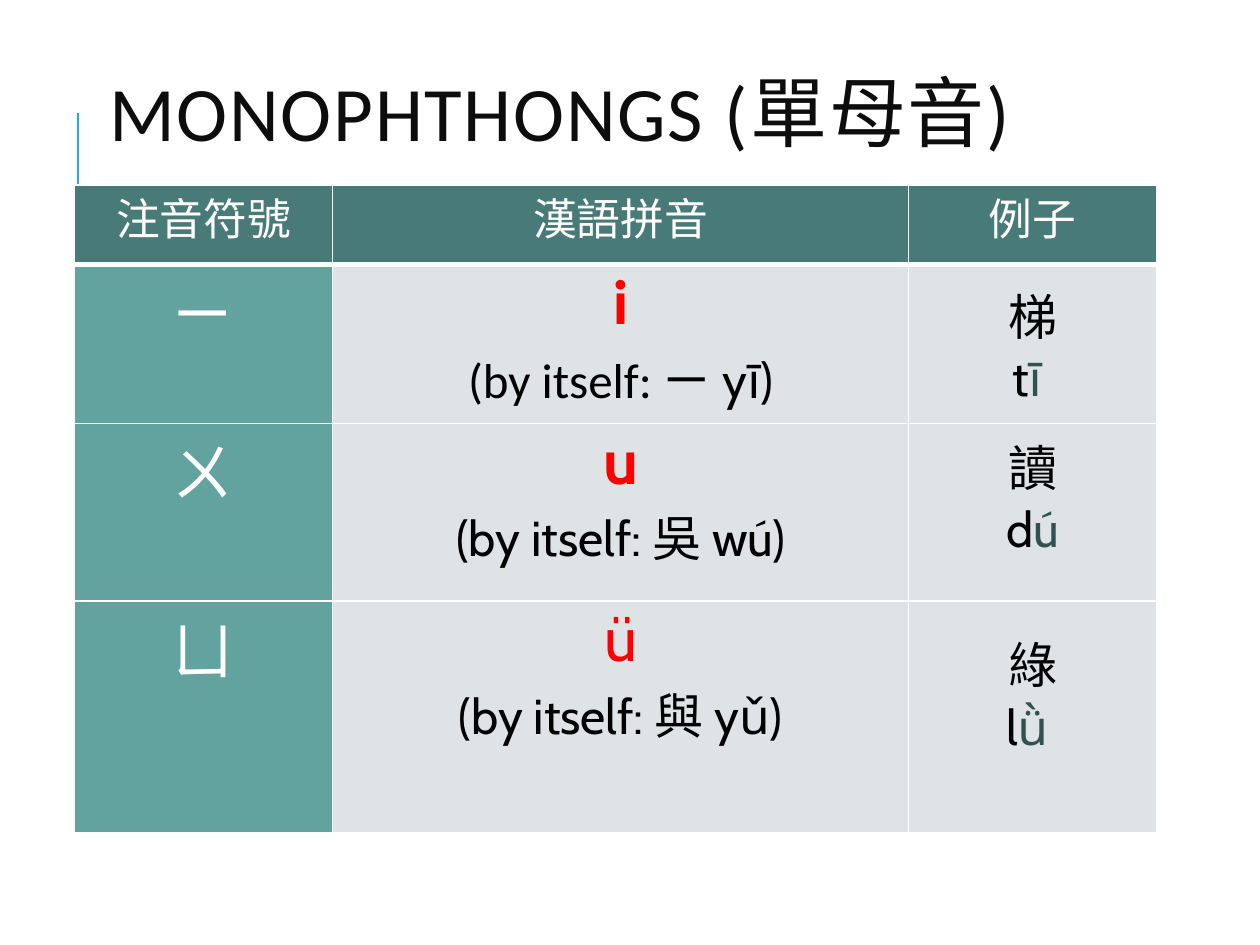
from lxml.etree import SubElement
from pptx import Presentation
from pptx.dml.color import RGBColor
from pptx.enum.shapes import MSO_CONNECTOR as Connector
from pptx.enum.text import MSO_ANCHOR as Anchor, PP_ALIGN as Align
from pptx.oxml.ns import qn
from pptx.util import Inches, Pt

WHITE = RGBColor(0xFF, 0xFF, 0xFF)
BLACK = RGBColor(0, 0, 0)
INK = RGBColor(0x0D, 0x0D, 0x0D)
RED = RGBColor(0xFF, 0, 0)
HEADER = RGBColor(0x48, 0x7B, 0x78)
TEAL = RGBColor(0x62, 0xA3, 0x9F)
PALE = RGBColor(0xDF, 0xE3, 0xE5)
DARK_TEAL = RGBColor(0x30, 0x52, 0x50)
BLUE = RGBColor(0x1C, 0xAD, 0xE4)

COLUMNS = (2.05, 4.57, 1.97)
LEFT, WIDTH = 0.59, sum(COLUMNS)


def add_text(paragraph, text, font="Cabin", size=28, color=BLACK, bold=False, spacing=0):
    """Append one formatted run to a paragraph."""
    run = paragraph.add_run()
    run.text = text
    run.font.name, run.font.size, run.font.bold = font, Pt(size), bold
    run.font.color.rgb = color
    if spacing:
        run.font._element.set("spc", str(spacing * 100))


def set_borders(cell, bottom):
    """Draw white borders around a cell, the bottom one in its own width."""
    properties = cell._tc.get_or_add_tcPr()
    for side, width in (("L", 1), ("R", 1), ("T", 1), ("B", bottom)):
        line = SubElement(properties, qn(f"a:ln{side}"), w=str(Pt(width)))
        SubElement(SubElement(line, qn("a:solidFill")), qn("a:srgbClr"), val=str(WHITE))


def fill_cell(cell, lines, fill, anchor=Anchor.TOP, bottom_border=1, margins=(0.07, 0, 0)):
    """Write centred lines, each a list of (text, format) pairs, into a styled cell."""
    side, top, bottom = margins
    set_borders(cell, bottom_border)
    cell.fill.solid()
    cell.fill.fore_color.rgb = fill
    cell.vertical_anchor = anchor
    cell.margin_left = cell.margin_right = Inches(side)
    cell.margin_top, cell.margin_bottom = Inches(top), Inches(bottom)
    frame = cell.text_frame
    for index, runs in enumerate(lines):
        paragraph = frame.add_paragraph() if index else frame.paragraphs[0]
        paragraph.alignment = Align.CENTER
        for text, style in runs:
            add_text(paragraph, text, **style)


def add_grid(slide, top, rows):
    """Add a table of the shared columns with the given row heights."""
    table = slide.shapes.add_table(
        len(rows), len(COLUMNS), Inches(LEFT), Inches(top), Inches(WIDTH), Inches(sum(rows))
    ).table
    for column, width in zip(table.columns, COLUMNS):
        column.width = Inches(width)
    for row, height in zip(table.rows, rows):
        row.height = Inches(height)
    return table


def fill_sound_row(row, symbol, vowel, usage, example, symbol_style=None, vowel_style=None,
                   example_style=None, bottom_border=1):
    """Fill a row with a symbol, its romanisation and an example word."""
    character, initial, final = example
    symbol_cell, vowel_cell, example_cell = row.cells
    symbol_format = {"size": 36, "color": WHITE, **(symbol_style or {})}
    vowel_format = {"size": 36, "color": RED, "bold": True, **(vowel_style or {})}
    fill_cell(symbol_cell, [[(symbol, symbol_format)]], TEAL, bottom_border=bottom_border)
    fill_cell(vowel_cell, [[(vowel, vowel_format)], usage], PALE, bottom_border=bottom_border)
    fill_cell(example_cell, [[(character, {})], [(initial, {}), (final, {"color": DARK_TEAL})]],
              PALE, bottom_border=bottom_border, **(example_style or {"anchor": Anchor.MIDDLE}))


def add_sound_tables(slide, top, rows, last_height):
    """Add the headed table and the one-row table that continues it."""
    table = add_grid(slide, top, rows)
    for cell, heading in zip(table.rows[0].cells, ("注音符號", "漢語拼音", "例子")):
        fill_cell(cell, [[(heading, {"size": 25, "color": WHITE})]], HEADER, bottom_border=3)
    calibri = {"font": "Calibri"}
    fill_sound_row(table.rows[1], "ㄧ", "i", [("(by itself: ㄧ ", calibri), ("yī)", {})],
                   ("梯", "t", "ī "), vowel_style=calibri)
    fill_sound_row(table.rows[2], "ㄨ", "u", [("(by itself: 吳 wú)", {})], ("讀", "d", "ú"),
                   example_style={"margins": (0.1, 0.05, 0.05)})
    last = add_grid(slide, top + sum(rows), (last_height,))
    fill_sound_row(last.rows[0], "ㄩ", "ü", [("(by itself: 與 yǔ)", {})], ("綠", "l", "ǜ "),
                   symbol_style={"font": "DejaVu Sans Mono"}, vowel_style={"bold": False},
                   example_style={"anchor": Anchor.MIDDLE, "margins": (0.07, 0, 0.4)},
                   bottom_border=3)


def add_accent(slide, left, top, height):
    """Draw the vertical accent line beside the title."""
    line = slide.shapes.add_connector(
        Connector.STRAIGHT, Inches(left), Inches(top + height), Inches(left), Inches(top))
    line.line.color.rgb = BLUE
    line.line.width = Pt(1.5)
    SubElement(line._element.spPr, qn("a:effectLst"))


def add_title(slide, left, top, width, height):
    """Add the slide title."""
    box = slide.shapes.add_textbox(Inches(left), Inches(top), Inches(width), Inches(height))
    frame = box.text_frame
    frame.word_wrap = True
    frame.vertical_anchor = Anchor.MIDDLE
    paragraph = frame.paragraphs[0]
    paragraph.line_spacing = 0.8
    add_text(paragraph, "MONOPHTHONGS (單母音)", font="Calibri", size=44, color=INK, spacing=1)


def main():
    """Build and save the presentation."""
    presentation = Presentation()
    presentation.slide_width, presentation.slide_height = Inches(10), Inches(7.5)
    slide = presentation.slides.add_slide(presentation.slide_layouts[6])
    add_accent(slide, 0.62, 0.9, 1)
    add_sound_tables(slide, 1.47, (0.63, 1.26, 1.41), 1.85)
    add_title(slide, 0.77, 0.13, 7.97, 1.64)
    presentation.save("out.pptx")


if __name__ == "__main__":
    main()
